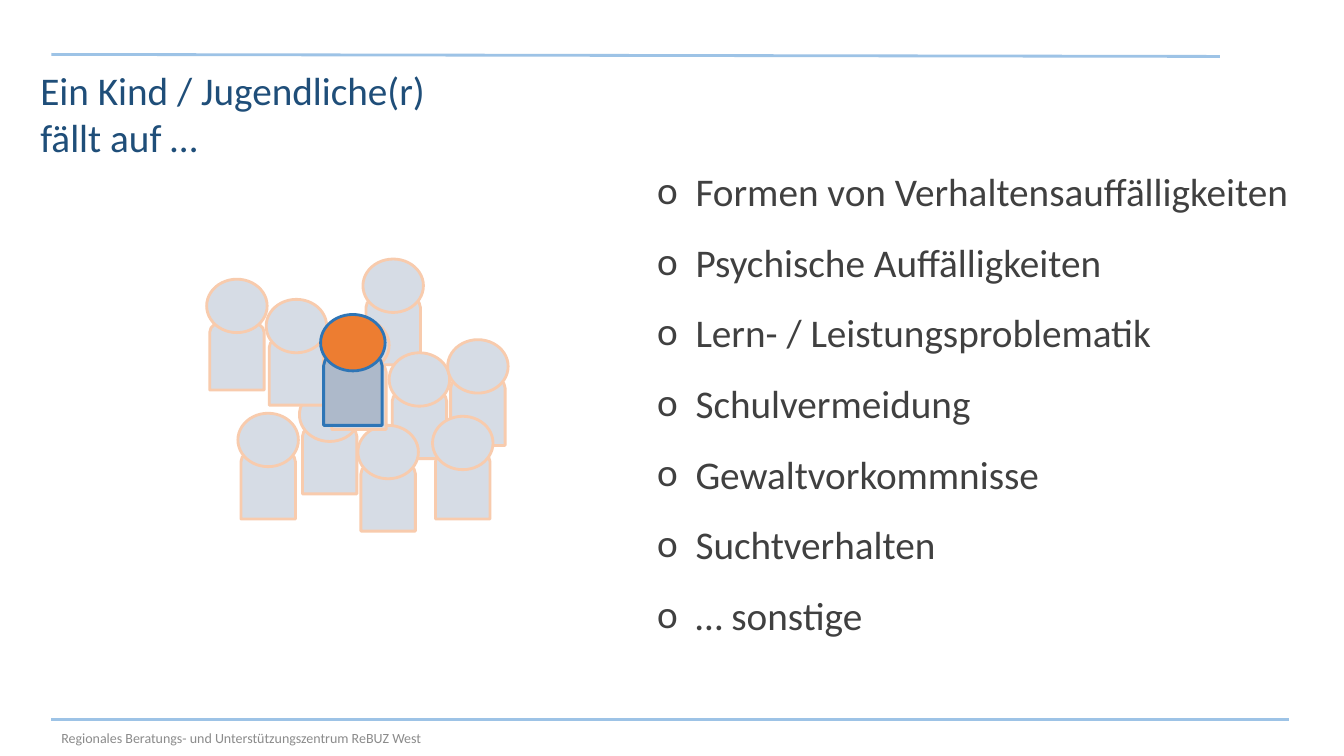
from lxml.etree import SubElement
from pptx import Presentation
from pptx.dml.color import RGBColor
from pptx.enum.shapes import MSO_CONNECTOR, MSO_SHAPE
from pptx.enum.text import MSO_ANCHOR as ANCHOR, MSO_AUTO_SIZE as AUTO, PP_ALIGN as ALIGN
from pptx.oxml.ns import qn
from pptx.util import Pt

PX = 9144
FONT = "Calibri"
COLORS = {
    "rule": "9DC3E6",
    "title": "1F4E79",
    "text": "404040",
    "footer": "8B8B8B",
    "crowd": "D6DCE5",
    "crowd_line": "F8CBAD",
    "body": "ADB9CA",
    "head": "ED7D31",
    "child_line": "2E75B6",
}
RULES = [(51, 714, 1278, 714), (51, 54, 1210, 56)]
CROWD = [
    (360, 257, 39), (386, 350, 39), (297, 385, 39), (355, 422, 39),
    (444, 337, 39), (264, 297, 39), (429, 413, 36), (236, 410, 39),
    (205, 277, 44), (326, 316, 44),
]
TITLE = "Ein Kind / Jugendliche(r)\nfällt auf …"
TOPICS = [
    "Formen von Verhaltensauffälligkeiten",
    "Psychische Auffälligkeiten",
    "Lern- / Leistungsproblematik",
    "Schulvermeidung",
    "Gewaltvorkommnisse",
    "Suchtverhalten",
    "… sonstige",
]
FOOTER = "Regionales Beratungs- und Unterstützungszentrum ReBUZ West"


class SlideBuilder:
    """Draws styled elements on one slide, with lengths in px of 1/100 inch."""

    def __init__(self, prs):
        self.slide = prs.slides.add_slide(prs.slide_layouts[5])
        self.shapes = self.slide.shapes

    def px(self, *lengths):
        return [n * PX for n in lengths]

    def color(self, name):
        return RGBColor.from_string(COLORS[name])

    def rule(self, *ends):
        line = self.shapes.add_connector(MSO_CONNECTOR.STRAIGHT, *self.px(*ends))
        line.line.color.rgb = self.color("rule")
        line.line.width = Pt(0)
        SubElement(line._element.spPr, qn("a:effectLst"))

    def shape(self, group, kind, box, fill, line):
        sp = group.shapes.add_shape(kind, *self.px(*box))
        sp.shadow.inherit = False
        sp.fill.solid()
        sp.fill.fore_color.rgb = self.color(fill)
        sp.line.color.rgb = self.color(line)
        sp.line.width = Pt(2)

    def figure(self, x, y, drop, body_size=(54, 66), head_size=(60, 53),
               body="crowd", head="crowd", line="crowd_line"):
        group = self.shapes.add_group_shape()
        self.shape(group, MSO_SHAPE.ROUND_2_SAME_RECTANGLE,
                   (x + 3, y + drop, *body_size), body, line)
        self.shape(group, MSO_SHAPE.OVAL, (x, y, *head_size), head, line)

    def fill_text(self, sp, text, size, color, anchor=ANCHOR.TOP):
        tf = sp.text_frame
        tf.word_wrap = True
        tf.auto_size = AUTO.NONE
        tf.vertical_anchor = anchor
        tf.text = text
        for p in tf.paragraphs:
            p.alignment = ALIGN.LEFT
            p.line_spacing = 1.0
            for r in p.runs:
                r.font.name = FONT
                r.font.size = Pt(size)
                r.font.color.rgb = self.color(color)
        return tf

    def title(self, box, text):
        sp = self.shapes.title
        sp.left, sp.top, sp.width, sp.height = self.px(*box)
        self.fill_text(sp, text, 28, "title")

    def text(self, box, text, size, color, anchor=ANCHOR.TOP):
        sp = self.shapes.add_textbox(*self.px(*box))
        return self.fill_text(sp, text, size, color, anchor)

    def bullets(self, box, items):
        tf = self.text(box, "\n".join(items), 28, "text")
        for p in tf.paragraphs:
            p.level = 1
            p.line_spacing = 1.5
            pPr = p._p.get_or_add_pPr()
            pPr.set("marL", str(88 * PX))
            pPr.set("indent", str(-38 * PX))
            tint = SubElement(pPr, qn("a:buClr"))
            SubElement(tint, qn("a:srgbClr"), val=COLORS["text"])
            SubElement(pPr, qn("a:buFont"), typeface=FONT)
            SubElement(pPr, qn("a:buChar"), char="o")


def main():
    prs = Presentation()
    prs.slide_width, prs.slide_height = 1333 * PX, 750 * PX
    s = SlideBuilder(prs)
    for ends in RULES:
        s.rule(*ends)
    for person in CROWD:
        s.figure(*person)
    s.figure(318, 312, 41, (58, 69), (64, 56), "body", "head", "child_line")
    s.title((30, 61, 436, 103), TITLE)
    s.bullets((592, 138, 718, 500), TOPICS)
    s.text((51, 714, 1227, 36), FOOTER, 10, "footer", ANCHOR.MIDDLE)
    prs.save("out.pptx")


if __name__ == "__main__":
    main()
